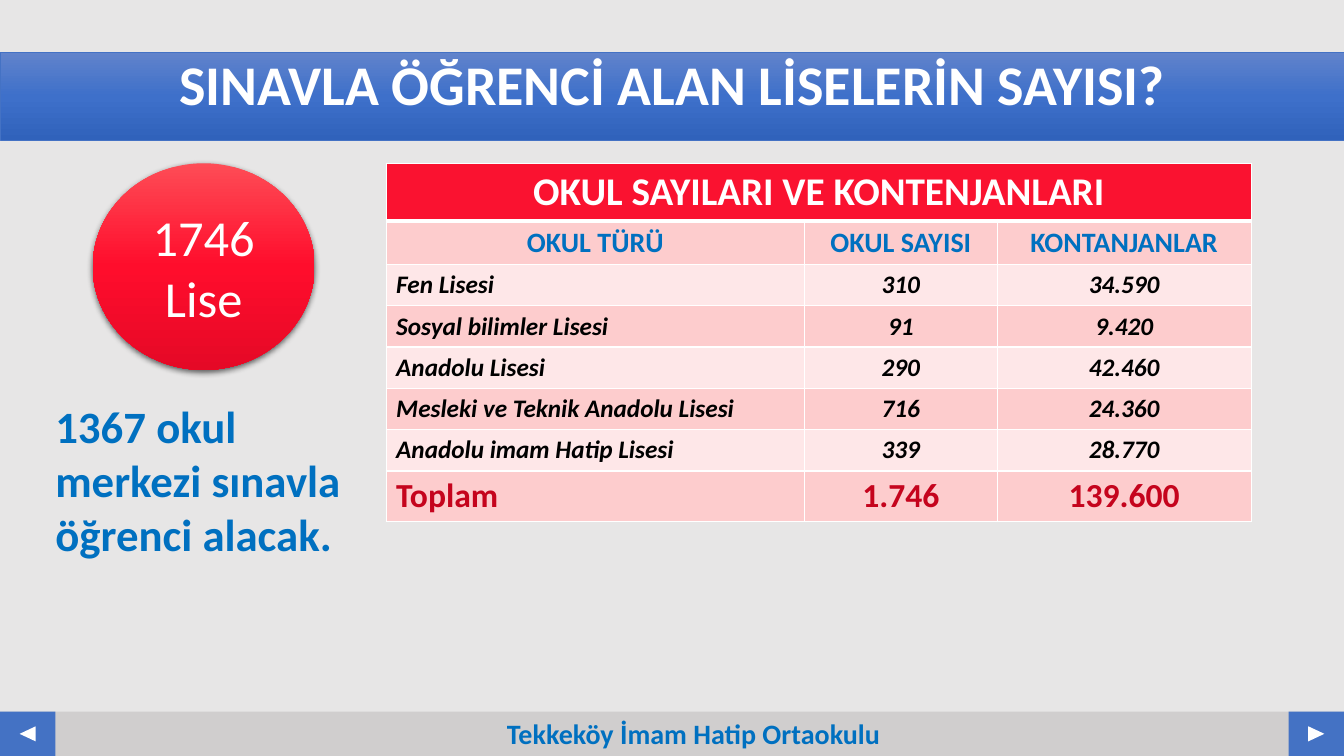
from copy import deepcopy

from lxml import etree
from pptx import Presentation
from pptx.dml.color import RGBColor
from pptx.enum import shapes, text
from pptx.oxml import ns
from pptx.util import Inches, Pt

FONT = "Calibri"
WHITE = RGBColor(0xFF, 0xFF, 0xFF)
BLACK = RGBColor(0, 0, 0)
PAGE = RGBColor(0xE7, 0xE6, 0xE6)
GREY = RGBColor(0xD0, 0xCE, 0xCE)
BLUE = RGBColor(0x44, 0x72, 0xC4)
TEXT_BLUE = RGBColor(0x00, 0x70, 0xC0)
RED = RGBColor(0xFA, 0x12, 0x30)
DARK_RED = RGBColor(0xC5, 0x04, 0x1D)
PINK = RGBColor(0xFD, 0xCC, 0xCD)
LIGHT_PINK = RGBColor(0xFE, 0xE7, 0xE8)
BLUE_GRADIENT = (RGBColor(0x61, 0x83, 0xCB), RGBColor(0x3E, 0x70, 0xCA),
                 RGBColor(0x30, 0x62, 0xBB))
RED_GRADIENT = (RGBColor(0xFE, 0x4C, 0x56), RGBColor(0xFF, 0x0D, 0x2C),
                RGBColor(0xE5, 0x09, 0x26))

HEADER = "OKUL SAYILARI VE KONTENJANLARI"
ROWS = [
    ("OKUL TÜRÜ", "OKUL SAYISI", "KONTANJANLAR"),
    ("Fen Lisesi", "310", "34.590"),
    ("Sosyal bilimler Lisesi", "91", "9.420"),
    ("Anadolu Lisesi", "290", "42.460"),
    ("Mesleki ve Teknik Anadolu Lisesi", "716", "24.360"),
    ("Anadolu imam Hatip Lisesi", "339", "28.770"),
    ("Toplam", "1.746", "139.600"),
]
COLUMN_WIDTHS = (4.15, 1.91, 2.52)
ROW_HEIGHTS = (0.57, 0.43, 0.41, 0.41, 0.41, 0.41, 0.41, 0.5)


def write(frame, content, size, color, bold=True, italic=False, align=text.PP_ALIGN.LEFT):
    frame.text = content
    for paragraph in frame.paragraphs:
        paragraph.alignment = align
        font = paragraph.font
        font.name, font.size, font.bold, font.italic = FONT, Pt(size), bold, italic
        font.color.rgb = color


def fill_gradient(shape, colors):
    """Fill from top to bottom with three evenly spaced colours."""
    shape.fill.gradient()
    shape.fill.gradient_angle = 270
    stop_list = shape._element.spPr.find(".//" + ns.qn("a:gsLst"))
    stop_list.append(deepcopy(stop_list[-1]))
    for index, (stop, color) in enumerate(zip(shape.fill.gradient_stops, colors)):
        stop.position = index / 2
        stop.color.rgb = color


def add_plain_shape(slide, kind, left, top, width, height, color, rotation=0):
    shape = slide.shapes.add_shape(
        kind, Inches(left), Inches(top), Inches(width), Inches(height))
    shape.shadow.inherit = False
    shape.fill.solid()
    shape.fill.fore_color.rgb = color
    shape.line.fill.background()
    shape.rotation = rotation
    return shape


def add_text(slide, content, left, top, width, height, size):
    box = slide.shapes.add_textbox(Inches(left), Inches(top), Inches(width), Inches(height))
    box.text_frame.word_wrap = True
    write(box.text_frame, content, size, TEXT_BLUE)


def add_footer(slide):
    rectangle = shapes.MSO_SHAPE.RECTANGLE
    add_plain_shape(slide, rectangle, 0, 7.06, 13.33, 0.44, GREY)
    for left, rotation in ((12.78, 90), (0, 270)):
        add_plain_shape(slide, rectangle, left, 7.06, 0.55, 0.44, BLUE)
        add_plain_shape(slide, shapes.MSO_SHAPE.ISOSCELES_TRIANGLE,
                        left + 0.2, 7.2, 0.15, 0.16, WHITE, rotation)
    add_text(slide, "Tekkeköy İmam Hatip Ortaokulu", 4.93, 7.06, 4.02, 0.44, 20)


def format_title(title):
    title.left, title.top = Inches(0), Inches(0.52)
    title.width, title.height = Inches(13.33), Inches(0.87)
    fill_gradient(title, BLUE_GRADIENT)
    title.line.color.rgb = BLUE
    title.line.width = Pt(0.5)
    frame = title.text_frame
    write(frame, "SINAVLA ÖĞRENCİ ALAN LİSELERİN SAYISI?", 40, WHITE,
          align=text.PP_ALIGN.CENTER)
    frame.paragraphs[0].line_spacing = 0.9
    frame.vertical_anchor = text.MSO_ANCHOR.TOP
    frame.auto_size = text.MSO_AUTO_SIZE.NONE


def add_total_circle(slide):
    circle = add_plain_shape(slide, shapes.MSO_SHAPE.OVAL, 0.92, 1.62, 2.2, 2.05, RED)
    fill_gradient(circle, RED_GRADIENT)
    effects = circle._element.spPr.find(ns.qn("a:effectLst"))
    shadow = etree.SubElement(effects, ns.qn("a:outerShdw"), blurRad=str(Pt(4.5)),
                              dist=str(Pt(1.5)), dir="5400000", rotWithShape="0")
    color = etree.SubElement(shadow, ns.qn("a:srgbClr"), val=str(BLACK))
    etree.SubElement(color, ns.qn("a:alpha"), val="63000")
    circle.text_frame.vertical_anchor = text.MSO_ANCHOR.MIDDLE
    write(circle.text_frame, "1746\nLise", 36, WHITE, bold=False, align=text.PP_ALIGN.CENTER)


def set_borders(cell, top=1, bottom=1):
    properties = cell._tc.get_or_add_tcPr()
    for side, width in (("L", 1), ("R", 1), ("T", top), ("B", bottom)):
        line = etree.SubElement(properties, ns.qn("a:ln" + side), w=str(Pt(width)))
        fill = etree.SubElement(line, ns.qn("a:solidFill"))
        etree.SubElement(fill, ns.qn("a:srgbClr"), val=str(WHITE))


def format_cell(cell, content, size, color, fill, italic=False,
                align=text.PP_ALIGN.CENTER, anchor=text.MSO_ANCHOR.MIDDLE):
    write(cell.text_frame, content, size, color, italic=italic, align=align)
    cell.vertical_anchor = anchor
    cell.fill.solid()
    cell.fill.fore_color.rgb = fill


def add_school_table(slide):
    table = slide.shapes.add_table(
        len(ROW_HEIGHTS), len(COLUMN_WIDTHS), Inches(3.83), Inches(1.62),
        Inches(sum(COLUMN_WIDTHS)), Inches(sum(ROW_HEIGHTS))).table
    for column, width in zip(table.columns, COLUMN_WIDTHS):
        column.width = Inches(width)
    for row_index, (row, height) in enumerate(zip(table.rows, ROW_HEIGHTS)):
        row.height = Inches(height)
        for cell in row.cells:
            set_borders(cell, top=3 if row_index == 1 else 1,
                        bottom=3 if row_index == 0 else 1)

    table.cell(0, 0).merge(table.cell(0, 2))
    format_cell(table.cell(0, 0), HEADER, 28, WHITE, RED, anchor=text.MSO_ANCHOR.TOP)
    for row_index, values in enumerate(ROWS, 1):
        is_heading, is_total = row_index == 1, row_index == len(ROWS)
        size, color = 18, BLACK
        if is_heading:
            size, color = 20, TEXT_BLUE
        elif is_total:
            size, color = 24, DARK_RED
        for column_index, value in enumerate(values):
            left_aligned = column_index == 0 and not is_heading
            format_cell(
                table.cell(row_index, column_index), value, size, color,
                PINK if row_index % 2 else LIGHT_PINK,
                italic=not (is_heading or is_total),
                align=text.PP_ALIGN.LEFT if left_aligned else text.PP_ALIGN.CENTER,
                anchor=text.MSO_ANCHOR.TOP if is_total else text.MSO_ANCHOR.MIDDLE)


def main():
    presentation = Presentation()
    presentation.slide_width, presentation.slide_height = Inches(13.33), Inches(7.5)
    slide = presentation.slides.add_slide(presentation.slide_layouts[5])
    slide.background.fill.solid()
    slide.background.fill.fore_color.rgb = PAGE
    format_title(slide.shapes.title)
    add_footer(slide)
    add_text(slide, "1367 okul merkezi sınavla öğrenci alacak.", 0.45, 3.91, 3.31, 1.72, 32)
    add_total_circle(slide)
    add_school_table(slide)
    presentation.save("out.pptx")


if __name__ == "__main__":
    main()
